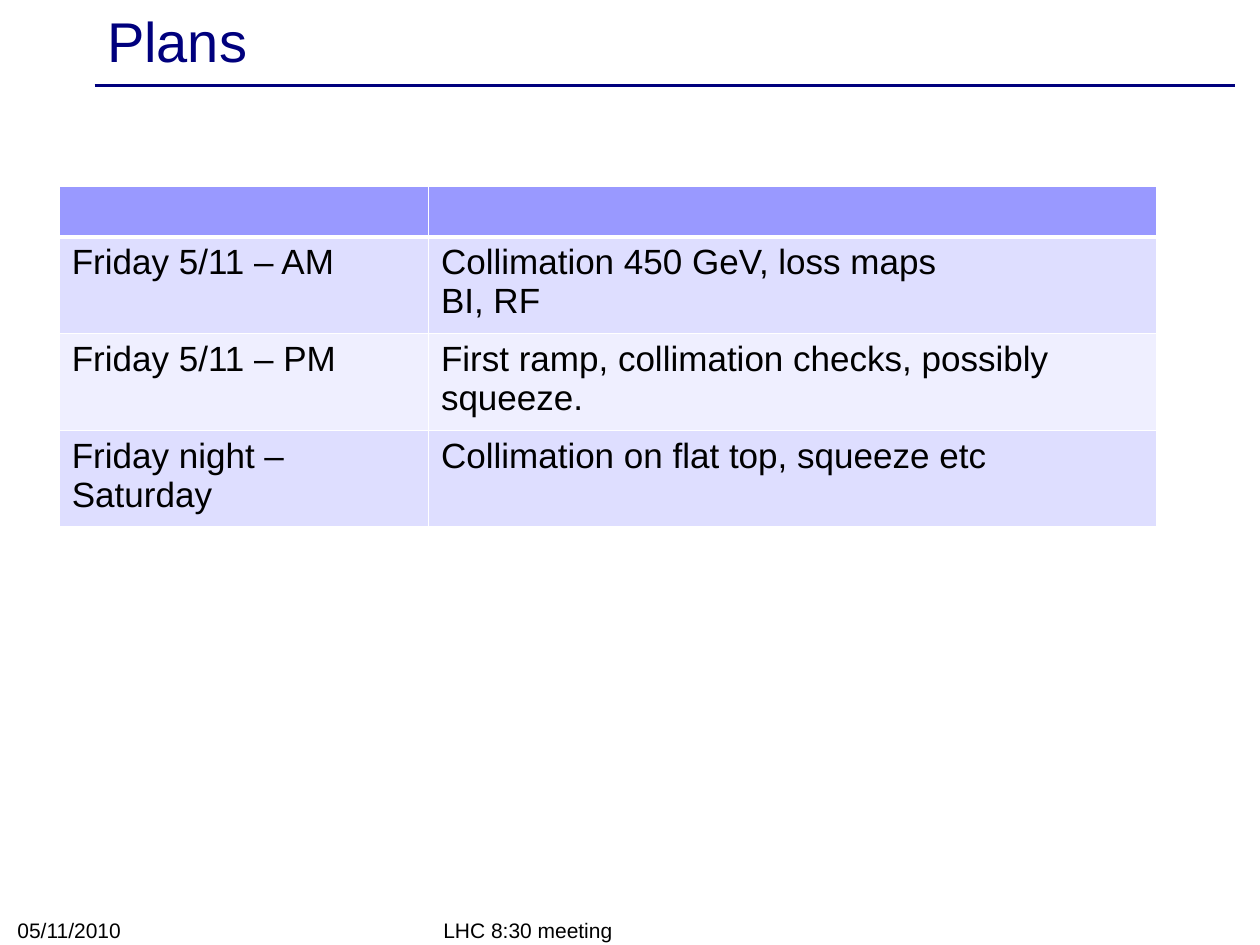
from lxml import etree
from pptx import Presentation
from pptx.dml.color import RGBColor
from pptx.enum.shapes import MSO_CONNECTOR
from pptx.enum.text import MSO_ANCHOR, MSO_AUTO_SIZE, PP_ALIGN
from pptx.oxml.ns import qn
from pptx.util import Emu, Pt

EMU_PER_PX = 9144
TITLE_ONLY = 5
STRAIGHT = MSO_CONNECTOR.STRAIGHT
MIDDLE, BOTTOM = MSO_ANCHOR.MIDDLE, MSO_ANCHOR.BOTTOM
NO_AUTOFIT = MSO_AUTO_SIZE.NONE
LEFT = PP_ALIGN.LEFT
FONT = "Arial"
COLORS = {
    "navy": "00007D",
    "text": "000000",
    "border": "FFFFFF",
    "header": "9999FF",
    "odd": "DEDEFF",
    "even": "EFEFFF",
}
PLANS = [
    ("", ""),
    ("Friday 5/11 – AM", "Collimation 450 GeV, loss maps\nBI, RF"),
    ("Friday 5/11 – PM", "First ramp, collimation checks, possibly squeeze."),
    ("Friday night – Saturday", "Collimation on flat top, squeeze etc"),
]


def px(length):
    return Emu(length * EMU_PER_PX)


def color(name):
    return RGBColor.from_string(COLORS[name])


def write(frame, text, size, color_name):
    frame.text = text
    for paragraph in frame.paragraphs:
        paragraph.alignment = LEFT
        paragraph.font.name = FONT
        paragraph.font.size = Pt(size)
        paragraph.font.color.rgb = color(color_name)


def add_title(slide, box, text):
    left, top, width, height = box
    title = slide.shapes.title
    title.left, title.top, title.width, title.height = map(px, box)
    frame = title.text_frame
    frame.auto_size = NO_AUTOFIT
    frame.vertical_anchor = MIDDLE
    write(frame, text, 32, "navy")
    rule_y = top + height + 8
    rule = slide.shapes.add_connector(
        STRAIGHT, px(left), px(rule_y), px(left + width + 5), px(rule_y))
    rule.line.color.rgb = color("navy")
    rule.line.width = Pt(2)
    etree.SubElement(rule.element.spPr, qn("a:effectLst"))


def set_borders(cell, top, bottom):
    properties = cell._tc.get_or_add_tcPr()
    widths = {"a:lnL": 1, "a:lnR": 1, "a:lnT": top, "a:lnB": bottom}
    for index, (tag, width) in enumerate(widths.items()):
        line = etree.Element(qn(tag), w=str(Pt(width)))
        fill = etree.SubElement(line, qn("a:solidFill"))
        etree.SubElement(fill, qn("a:srgbClr"), val=COLORS["border"])
        properties.insert(index, line)


def add_plan_table(slide, box, plans, first_width, header_height):
    width, height = box[2:]
    table = slide.shapes.add_table(len(plans), 2, *map(px, box)).table
    table.columns[0].width = px(first_width)
    table.columns[1].width = px(width - first_width)
    row_height = (height - header_height) // (len(plans) - 1)
    for row, texts in enumerate(plans):
        table.rows[row].height = px(row_height if row else header_height)
        fill = ("odd" if row % 2 else "even") if row else "header"
        for column, text in enumerate(texts):
            cell = table.cell(row, column)
            cell.fill.solid()
            cell.fill.fore_color.rgb = color(fill)
            set_borders(cell, 3 if row == 1 else 1, 1 if row else 3)
            if text:
                write(cell.text_frame, text, 20, "text")


def add_footer(slide, box, text):
    frame = slide.shapes.add_textbox(*map(px, box)).text_frame
    frame.word_wrap = True
    frame.vertical_anchor = BOTTOM
    write(frame, text, 12, "text")


def main():
    presentation = Presentation()
    presentation.slide_width, presentation.slide_height = px(1000), px(750)
    slide = presentation.slides.add_slide(presentation.slide_layouts[TITLE_ONLY])
    add_title(slide, (75, 3, 900, 57), "Plans")
    add_footer(slide, (342, 725, 317, 28), "LHC 8:30 meeting")
    add_footer(slide, (4, 724, 233, 29), "05/11/2010")
    add_plan_table(slide, (47, 148, 871, 256), PLANS, 293, 40)
    presentation.save("out.pptx")


if __name__ == "__main__":
    main()
